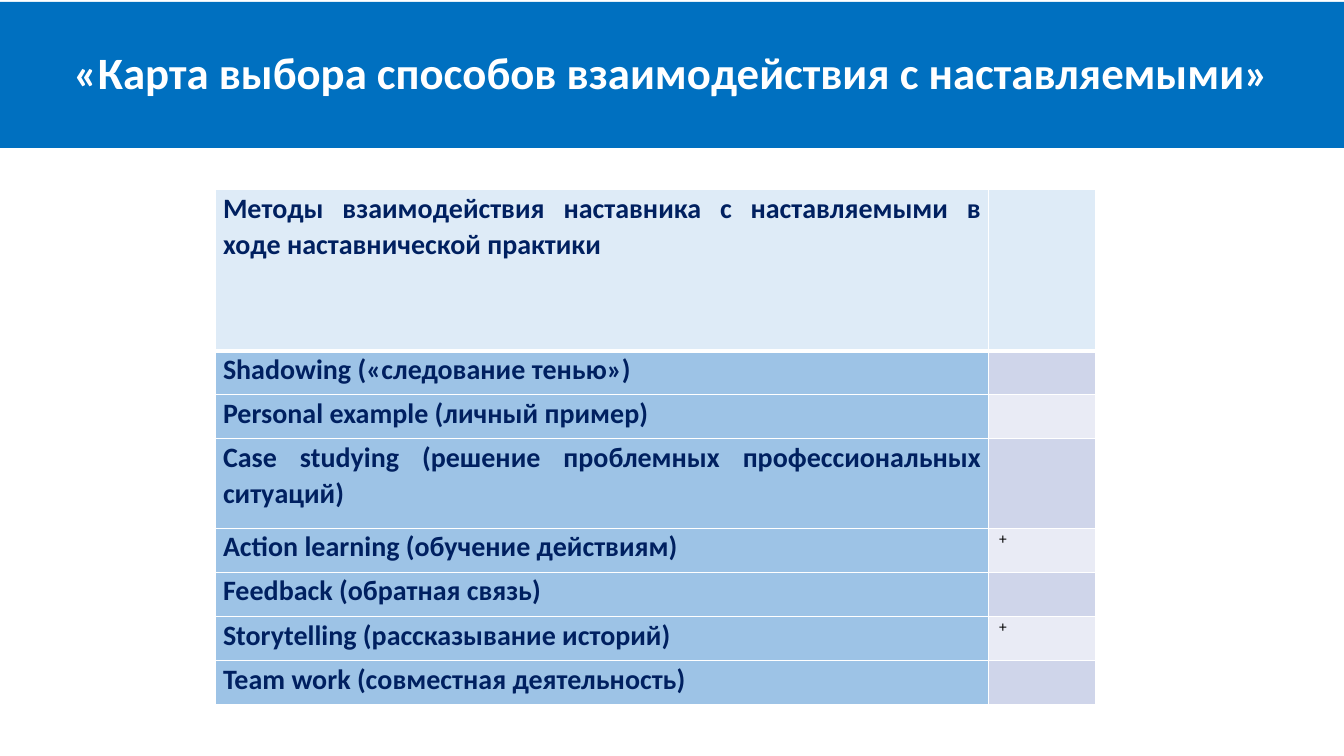
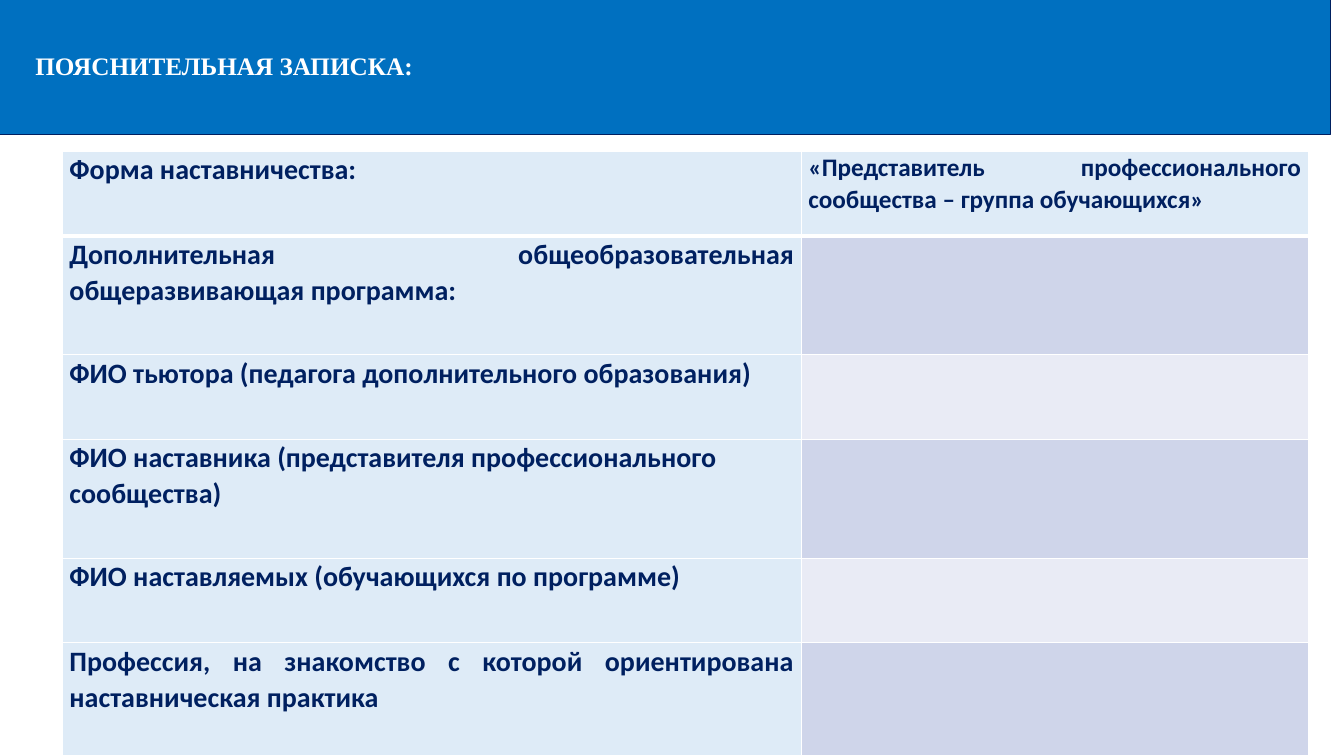
from lxml.etree import SubElement
from pptx import Presentation
from pptx.dml.color import RGBColor
from pptx.enum.shapes import MSO_SHAPE as Shape
from pptx.enum.text import MSO_ANCHOR as Anchor, PP_ALIGN as Align
from pptx.oxml.ns import qn
from pptx.util import Cm, Pt

BLUE = RGBColor(0x00, 0x70, 0xC0)
NAVY = RGBColor(0x00, 0x20, 0x60)
WHITE = RGBColor(0xFF, 0xFF, 0xFF)
BLACK = RGBColor(0x00, 0x00, 0x00)
PALE = RGBColor(0xDE, 0xEB, 0xF7)
SKY = RGBColor(0x9D, 0xC3, 0xE6)
BANDS = RGBColor(0xE9, 0xEB, 0xF5), RGBColor(0xCF, 0xD5, 0xEA)

PLUS = ("+", dict(size=11, color=BLACK, bold=False, indent=0.27))
LEFT = dict(align=Align.LEFT)

METHODS = [
    (4.06, "Методы взаимодействия наставника с наставляемыми в ходе наставнической практики"),
    (1.11, "Shadowing («следование тенью»)"),
    (1.11, "Personal example (личный пример)"),
    (2.26, "Case studying (решение проблемных профессиональных ситуаций)"),
    (1.11, "Action learning (обучение действиям)", PLUS),
    (1.11, "Feedback (обратная связь)"),
    (1.11, "Storytelling (рассказывание историй)", PLUS),
    (1.11, "Team work (совместная деятельность)"),
]
NOTE = [
    (2.13, "Форма наставничества:",
     ("«Представитель профессионального сообщества – группа обучающихся»", dict(size=18))),
    (3, "Дополнительная общеобразовательная общеразвивающая программа:"),
    (2.13, "ФИО тьютора (педагога дополнительного образования)"),
    (3, ("ФИО наставника (представителя профессионального сообщества)", LEFT)),
    (2.13, "ФИО наставляемых (обучающихся по программе)"),
    (2.84, "Профессия, на знакомство с которой ориентирована наставническая практика"),
]


def write(frame, text, size=20, color=NAVY, bold=True, font="Calibri",
          align=Align.JUSTIFY, spacing=1.05, after=8):
    paragraph = frame.paragraphs[0]
    paragraph.alignment = align
    paragraph.line_spacing = spacing
    paragraph.space_after = Pt(after)
    run = paragraph.add_run()
    run.text = text
    run.font.size = Pt(size)
    run.font.name = font
    run.font.bold = bold
    run.font.color.rgb = color


class Deck:
    def __init__(self):
        self.presentation = Presentation()
        self.presentation.slide_width = Cm(33.87)
        self.presentation.slide_height = Cm(19.05)
        self.slide = None

    def add_slide(self):
        self.slide = self.presentation.slides.add_slide(self.presentation.slide_layouts[6])

    def title(self, text, top, width, height, line=None, indent=0.25, **style):
        shape = self.slide.shapes.add_shape(
            Shape.RECTANGLE, 0, Cm(top), Cm(width), Cm(height))
        shape.shadow.inherit = False
        shape.fill.solid()
        shape.fill.fore_color.rgb = BLUE
        if line is None:
            shape.line.fill.background()
        else:
            shape.line.color.rgb = line
            shape.line.width = Pt(0.75)
        frame = shape.text_frame
        frame.word_wrap = True
        frame.vertical_anchor = Anchor.MIDDLE
        frame.margin_left = Cm(indent)
        write(frame, text, color=WHITE, spacing=0.9, after=0, **style)

    def table(self, rows, left, top, widths, label_fill):
        heights = [row[0] for row in rows]
        table = self.slide.shapes.add_table(
            len(rows), len(widths), Cm(left), Cm(top),
            Cm(sum(widths)), Cm(sum(heights))).table
        table.first_row = table.horz_banding = False
        for column, width in zip(table.columns, widths):
            column.width = Cm(width)
        for index, (height, *contents) in enumerate(rows):
            table.rows[index].height = Cm(height)
            fills = (label_fill, BANDS[index % 2]) if index else (PALE, PALE)
            contents += [None] * (len(widths) - len(contents))
            for column, (content, fill) in enumerate(zip(contents, fills)):
                self.cell(table.cell(index, column), content, fill, index)

    def cell(self, cell, content, fill, row):
        self.borders(cell, top=3 if row == 1 else 1, bottom=1 if row else 3)
        cell.fill.solid()
        cell.fill.fore_color.rgb = fill
        cell.margin_top = cell.margin_bottom = 0
        cell.margin_left = cell.margin_right = Cm(0.18)
        if content:
            text, style = (content, {}) if isinstance(content, str) else content
            style = dict(style)
            cell.margin_left = Cm(style.pop("indent", 0.18))
            write(cell.text_frame, text, **style)

    def borders(self, cell, top, bottom):
        properties = cell._tc.get_or_add_tcPr()
        for side, width in (("L", 1), ("R", 1), ("T", top), ("B", bottom)):
            line = SubElement(properties, qn(f"a:ln{side}"), w=str(Pt(width)))
            SubElement(SubElement(line, qn("a:solidFill")), qn("a:srgbClr"), val=str(WHITE))


def main():
    deck = Deck()

    deck.add_slide()
    deck.title("«Карта выбора способов взаимодействия с наставляемыми»",
               0.05, 33.87, 3.68, size=32, align=Align.CENTER)
    deck.table(METHODS, 5.44, 4.78, (19.47, 2.69), SKY)

    deck.add_slide()
    deck.title("ПОЯСНИТЕЛЬНАЯ ЗАПИСКА:", 0, 33.53, 3.38, line=NAVY, indent=0.89,
               size=18, font="Times New Roman", align=Align.LEFT)
    deck.table(NOTE, 1.57, 3.81, (18.62, 12.78), PALE)

    deck.presentation.save("out.pptx")


if __name__ == "__main__":
    main()
